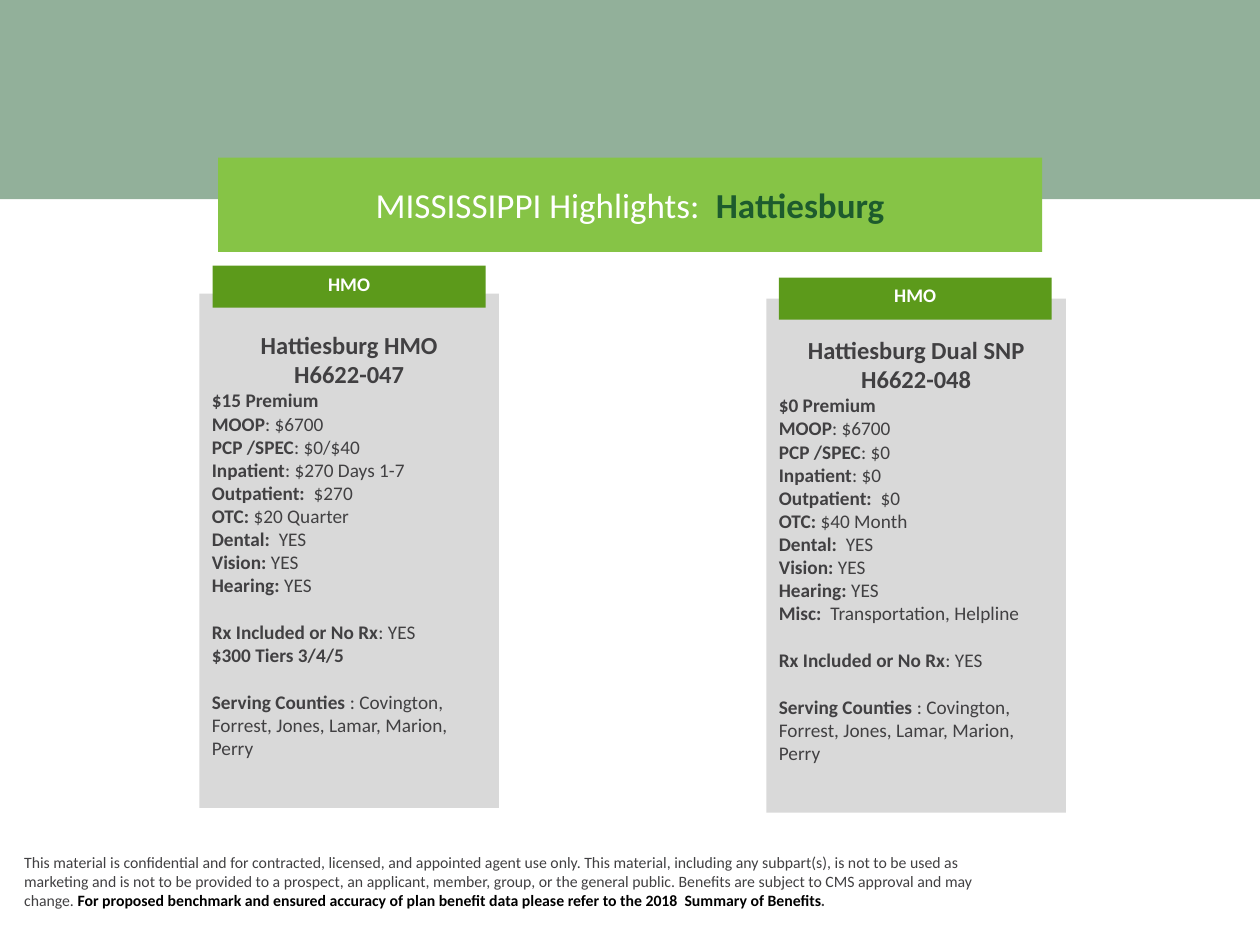
from lxml.etree import SubElement
from pptx import Presentation
from pptx.dml.color import RGBColor
from pptx.enum.shapes import MSO_SHAPE
from pptx.enum.text import MSO_ANCHOR, PP_ALIGN
from pptx.oxml.ns import qn
from pptx.util import Pt

FONT = "Calibri"
WHITE = RGBColor(0xFF, 0xFF, 0xFF)
BLACK = RGBColor(0x00, 0x00, 0x00)
DARK_GREEN = RGBColor(0x1D, 0x5B, 0x2D)
LIGHT_GREEN = RGBColor(0x86, 0xC4, 0x46)
TAB_GREEN = RGBColor(0x5C, 0x9A, 0x1B)
CARD_GREY = RGBColor(0xD9, 0xD9, 0xD9)
TEXT_GREY = RGBColor(0x41, 0x40, 0x42)

BODY_SIZE = 11
BODY_LINE = 13.4
COUNTIES = ": Covington, Forrest, Jones, Lamar, Marion, Perry"

HMO_PLAN = {
    "titles": ["Hattiesburg HMO", "H6622-047"],
    "groups": [
        [
            ("$15 Premium", ""),
            ("MOOP", ": $6700"),
            ("PCP /SPEC", ": $0/$40"),
            ("Inpatient", ": $270 Days 1-7"),
            ("Outpatient:  ", "$270"),
            ("OTC:", " $20 Quarter"),
            ("Dental:  ", "YES"),
            ("Vision: ", "YES"),
            ("Hearing: ", "YES"),
        ],
        [("Rx Included or No Rx", ": YES"), ("$300 Tiers 3/4/5", "")],
        [("Serving Counties ", COUNTIES)],
    ],
}
DUAL_PLAN = {
    "titles": ["Hattiesburg Dual SNP", "H6622-048"],
    "groups": [
        [
            ("$0 Premium", ""),
            ("MOOP", ": $6700"),
            ("PCP /SPEC", ": $0"),
            ("Inpatient", ": $0"),
            ("Outpatient:  ", "$0"),
            ("OTC:", " $40 Month"),
            ("Dental:  ", "YES"),
            ("Vision: ", "YES"),
            ("Hearing: ", "YES"),
            ("Misc:  ", "Transportation, Helpline"),
        ],
        [("Rx Included or No Rx", ": YES")],
        [("Serving Counties ", COUNTIES)],
    ],
}


def add_box(slide, left, top, width, height, color):
    """Add a flat rectangle with top-anchored, wrapping text."""
    shape = slide.shapes.add_shape(
        MSO_SHAPE.RECTANGLE, Pt(left), Pt(top), Pt(width), Pt(height)
    )
    shape.shadow.inherit = False
    shape.fill.solid()
    shape.fill.fore_color.rgb = color
    shape.line.fill.background()
    shape.text_frame.word_wrap = True
    shape.text_frame.vertical_anchor = MSO_ANCHOR.TOP
    return shape


def add_run(paragraph, text, size, color, bold=False):
    """Append one formatted run to a paragraph."""
    run = paragraph.add_run()
    run.text = text
    run.font.name = FONT
    run.font.size = Pt(size)
    run.font.bold = bold
    run.font.color.rgb = color


def add_band(slide):
    """Add the translucent band across the top."""
    band = add_box(slide, 0, 0, 720, 113.8, DARK_GREEN)
    color = band.fill._xPr.find(qn("a:solidFill")).find(qn("a:srgbClr"))
    SubElement(color, qn("a:alpha"), val="48000")


def add_heading(slide):
    """Add the heading bar with the state and city."""
    heading = add_box(slide, 124.6, 90, 470.9, 54, LIGHT_GREEN)
    heading.text_frame.vertical_anchor = MSO_ANCHOR.MIDDLE
    paragraph = heading.text_frame.paragraphs[0]
    paragraph.alignment = PP_ALIGN.CENTER
    add_run(paragraph, "MISSISSIPPI Highlights:  ", 20, WHITE)
    add_run(paragraph, "Hattiesburg", 20, DARK_GREEN, True)


def add_plan_card(slide, left, top, plan):
    """Add a grey card with the plan's titles and grouped benefits."""
    frame = add_box(slide, left, top, 171.1, 293.8, CARD_GREY).text_frame
    frame.margin_top = Pt(20.7)
    for index, title in enumerate(plan["titles"]):
        paragraph = frame.add_paragraph() if index else frame.paragraphs[0]
        paragraph.alignment = PP_ALIGN.CENTER
        add_run(paragraph, title, 14, TEXT_GREY, True)
    for group_index, group in enumerate(plan["groups"]):
        for row_index, (label, value) in enumerate(group):
            paragraph = frame.add_paragraph()
            paragraph.alignment = PP_ALIGN.LEFT
            if group_index and not row_index:
                paragraph.space_before = Pt(BODY_LINE)
            add_run(paragraph, label, BODY_SIZE, TEXT_GREY, True)
            if value:
                add_run(paragraph, value, BODY_SIZE, TEXT_GREY)


def add_plan_tab(slide, left, top, label):
    """Add the green tab that names the plan type."""
    frame = add_box(slide, left, top, 156, 24, TAB_GREEN).text_frame
    frame.margin_left = frame.margin_right = Pt(3.6)
    frame.margin_top = frame.margin_bottom = Pt(3.6)
    paragraph = frame.paragraphs[0]
    paragraph.alignment = PP_ALIGN.CENTER
    add_run(paragraph, label, BODY_SIZE, WHITE, True)


def add_disclaimer(slide):
    """Add the confidentiality note at the bottom."""
    box = slide.shapes.add_textbox(Pt(6.7), Pt(484), Pt(563), Pt(40))
    box.text_frame.word_wrap = True
    paragraph = box.text_frame.paragraphs[0]
    add_run(
        paragraph,
        "This material is confidential and for contracted, licensed, and "
        "appointed agent use only. This material, including any subpart(s), "
        "is not to be used as marketing and is not to be provided to a "
        "prospect, an applicant, member, group, or the general public. "
        "Benefits are subject to CMS approval and may change. ",
        9,
        TEXT_GREY,
    )
    add_run(
        paragraph,
        "For proposed benchmark and ensured accuracy of plan benefit data "
        "please refer to the 2018  Summary of Benefits",
        9,
        BLACK,
        True,
    )
    add_run(paragraph, ".", 9, TEXT_GREY, True)


def main():
    """Build and save the plan highlights slide."""
    presentation = Presentation()
    presentation.slide_width = Pt(720)
    presentation.slide_height = Pt(540)
    slide = presentation.slides.add_slide(presentation.slide_layouts[6])
    add_disclaimer(slide)
    add_band(slide)
    add_heading(slide)
    add_plan_card(slide, 114, 167.8, HMO_PLAN)
    add_plan_card(slide, 438, 170.6, DUAL_PLAN)
    add_plan_tab(slide, 121.5, 151.8, "HMO")
    add_plan_tab(slide, 445, 158.6, "HMO")
    presentation.save("out.pptx")


if __name__ == "__main__":
    main()
